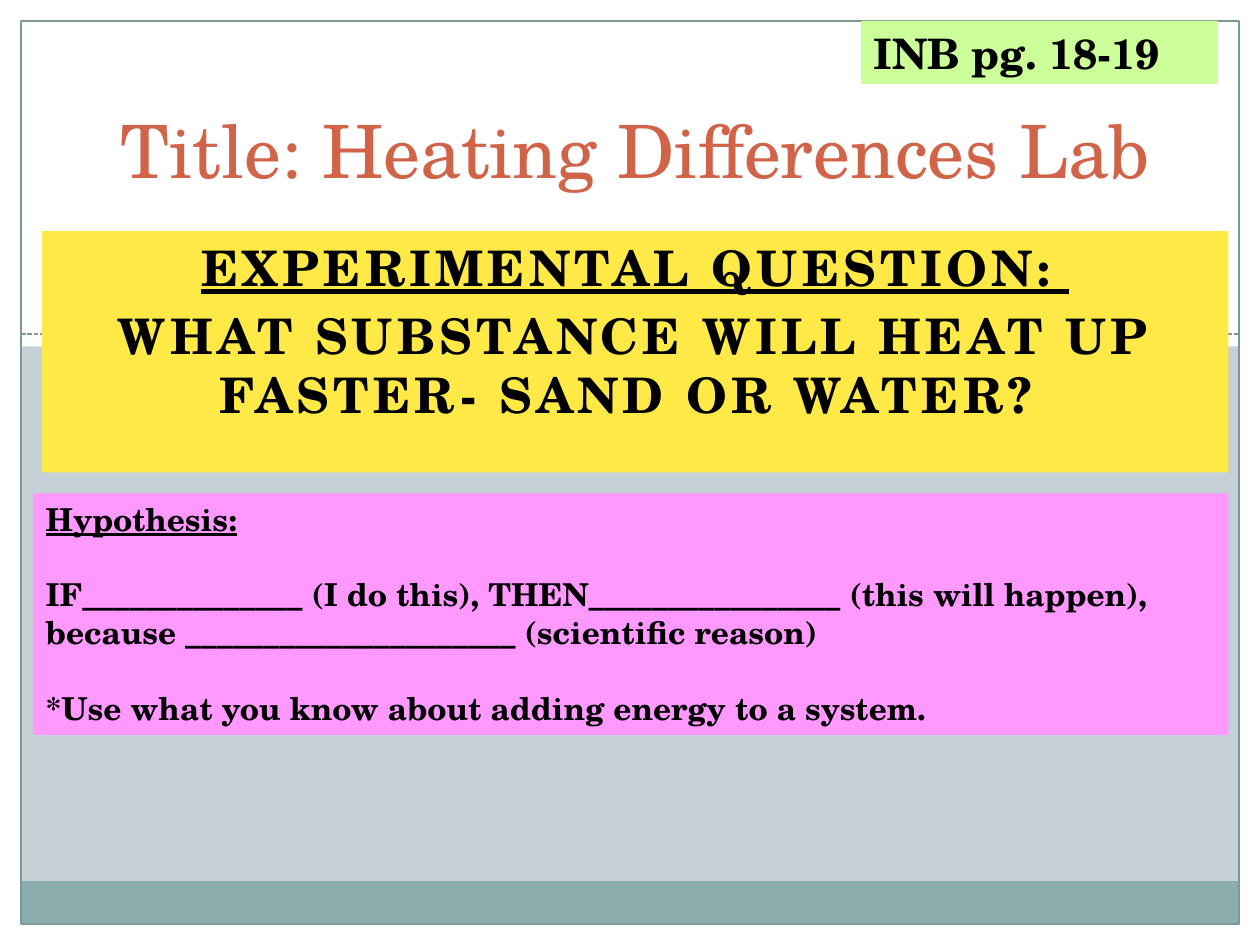
from pptx import Presentation
from pptx.dml.color import RGBColor
from pptx.enum.dml import MSO_LINE
from pptx.enum.shapes import MSO_CONNECTOR, MSO_SHAPE
from pptx.enum.text import MSO_ANCHOR, MSO_AUTO_SIZE, PP_ALIGN
from pptx.oxml.ns import qn
from pptx.util import Pt
from lxml.etree import SubElement

WHITE = RGBColor(0xFF, 0xFF, 0xFF)
BLACK = RGBColor(0, 0, 0)
MIST = RGBColor(0xC5, 0xD1, 0xD7)
TEAL = RGBColor(0x8C, 0xAD, 0xAE)
SLATE = RGBColor(0x7C, 0x99, 0x9A)
RUST = RGBColor(0xD1, 0x63, 0x49)
YELLOW = RGBColor(0xFF, 0xE9, 0x47)
GREEN = RGBColor(0xCC, 0xFF, 0x99)
PINK = RGBColor(0xFF, 0x99, 0xFF)

FONT = "TeX Gyre Schola"
WIDTH, HEIGHT, MARGIN = 720, 540, 12
INNER_WIDTH, INNER_HEIGHT = WIDTH - 2 * MARGIN, HEIGHT - 2 * MARGIN
DIVIDER_TOP = 190.8

BANDS = [
    (0, HEIGHT - MARGIN, WIDTH, MARGIN, WHITE),
    (WIDTH - MARGIN, 0, MARGIN, HEIGHT, WHITE),
    (0, 0, MARGIN, HEIGHT, WHITE),
    (0, 0, WIDTH, 198, WHITE),
    (MARGIN, 503.5, INNER_WIDTH, 24.5, TEAL),
]

TITLE = {
    "box": (57, 54, 612, 60),
    "lines": [("Title: Heating Differences Lab", False)],
    "font": {"size": Pt(42), "bold": False},
    "color": RUST,
    "align": PP_ALIGN.CENTER,
    "anchor": MSO_ANCHOR.BOTTOM,
}
QUESTION = {
    "box": (24, 132, 678, 138),
    "fill": YELLOW,
    "lines": [
        ("EXPERIMENTAL QUESTION: ", True),
        ("WHAT SUBSTANCE WILL HEAT UP FASTER- SAND OR WATER? ", False),
    ],
    "font": {"size": Pt(28), "bold": True},
    "align": PP_ALIGN.CENTER,
    "first_gap": 5.6,
    "gap": 5.6,
    "tracking": 250,
}
PAGE_LABEL = {
    "box": (492, 12, 204, 36),
    "fill": GREEN,
    "lines": [("INB pg. 18-19", False)],
    "font": {"size": Pt(24), "bold": True},
}
HYPOTHESIS = {
    "box": (19, 282, 683, 138),
    "fill": PINK,
    "lines": [
        ("Hypothesis:", True),
        ("IF______________ (I do this), THEN________________ (this will happen), "
         "because _____________________ (scientific reason)", False),
        ("*Use what you know about adding energy to a system.", False),
    ],
    "font": {"size": Pt(18), "bold": True},
    "gap": 21.7,
}


def add_rectangle(slide, left, top, width, height, fill=None):
    shape = slide.shapes.add_shape(
        MSO_SHAPE.RECTANGLE, Pt(left), Pt(top), Pt(width), Pt(height))
    shape.shadow.inherit = False
    shape.line.fill.background()
    if fill is None:
        shape.fill.background()
    else:
        shape.fill.solid()
        shape.fill.fore_color.rgb = fill
    return shape


def add_divider(slide):
    divider = slide.shapes.add_connector(
        MSO_CONNECTOR.STRAIGHT, Pt(MARGIN), Pt(DIVIDER_TOP),
        Pt(WIDTH - MARGIN), Pt(DIVIDER_TOP))
    divider.line.color.rgb = SLATE
    divider.line.width = Pt(0.9)
    divider.line.dash_style = MSO_LINE.SQUARE_DOT
    SubElement(divider.element.spPr, qn("a:effectLst"))


def fill_text(shape, content):
    for name, value in zip(("left", "top", "width", "height"), content["box"]):
        setattr(shape, name, Pt(value))
    if "fill" in content:
        shape.fill.solid()
        shape.fill.fore_color.rgb = content["fill"]
    frame = shape.text_frame
    frame_format = {
        "word_wrap": True,
        "auto_size": MSO_AUTO_SIZE.NONE,
        "vertical_anchor": content.get("anchor", MSO_ANCHOR.TOP),
    }
    for name, value in frame_format.items():
        setattr(frame, name, value)
    for index, (text, underline) in enumerate(content["lines"]):
        paragraph = frame.add_paragraph() if index else frame.paragraphs[0]
        paragraph.alignment = content.get("align", PP_ALIGN.LEFT)
        paragraph.space_before = Pt(content.get("gap" if index else "first_gap", 0))
        run = paragraph.add_run()
        run.text = text
        font_format = {"name": FONT, "underline": underline, **content["font"]}
        for name, value in font_format.items():
            setattr(run.font, name, value)
        run.font.color.rgb = content.get("color", BLACK)
        if "tracking" in content:
            run.font._element.set("spc", str(content["tracking"]))


def main():
    presentation = Presentation()
    presentation.slide_width, presentation.slide_height = Pt(WIDTH), Pt(HEIGHT)
    slide = presentation.slides.add_slide(presentation.slide_layouts[0])
    slide.background.fill.solid()
    slide.background.fill.fore_color.rgb = MIST
    title, question = slide.shapes.title, slide.placeholders[1]

    for band in BANDS:
        add_rectangle(slide, *band)
    add_divider(slide)
    border = add_rectangle(slide, MARGIN, MARGIN, INNER_WIDTH, INNER_HEIGHT)
    border.line.color.rgb = SLATE
    border.line.width = Pt(0.75)

    for placeholder, content in ((question, QUESTION), (title, TITLE)):
        fill_text(placeholder, content)
        placeholder.element.getparent().append(placeholder.element)
    for content in (PAGE_LABEL, HYPOTHESIS):
        fill_text(add_rectangle(slide, *content["box"]), content)
    presentation.save("out.pptx")


if __name__ == "__main__":
    main()
